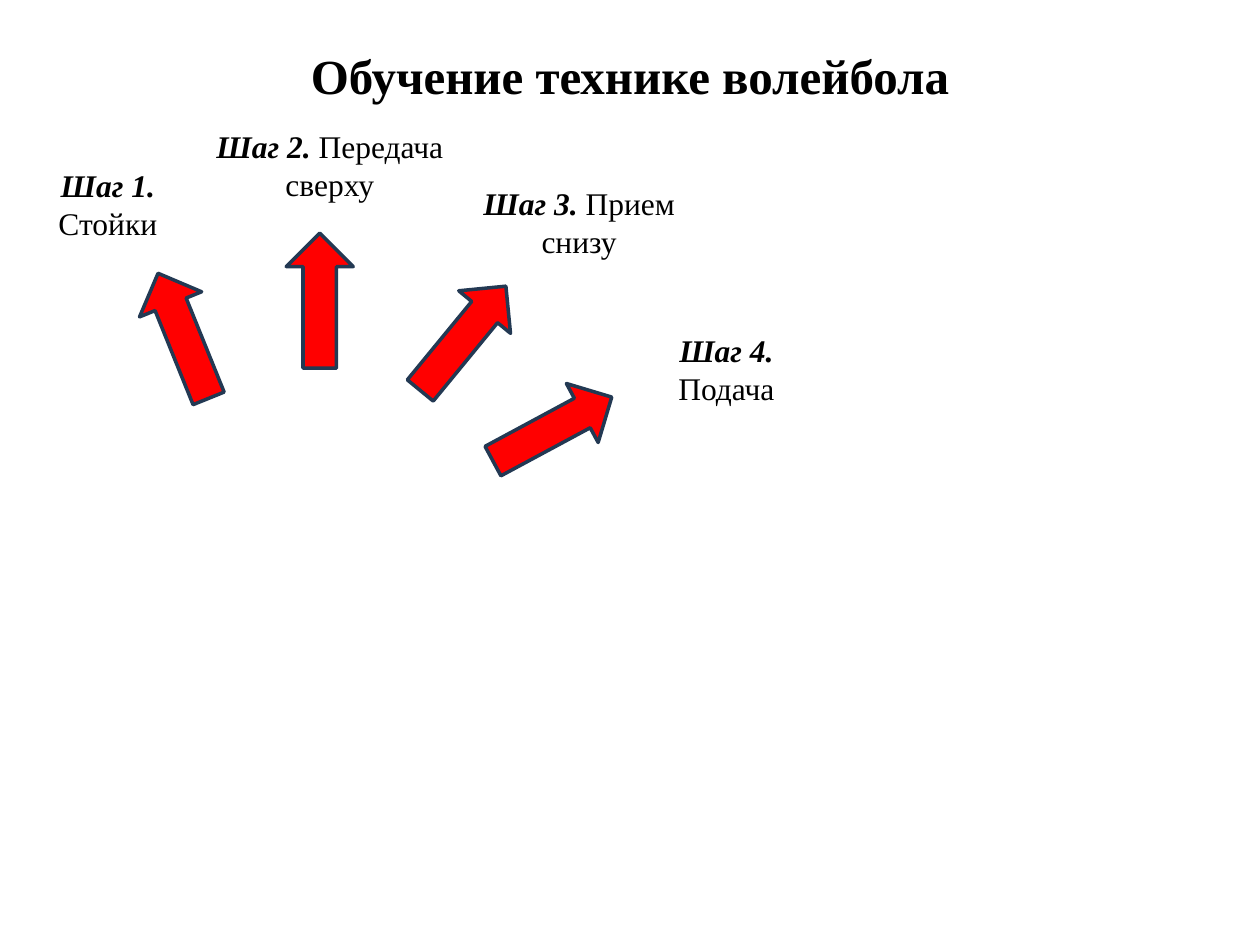
"""Build a slide with the steps of learning volleyball technique."""
from dataclasses import dataclass

from pptx import Presentation
from pptx.dml.color import RGBColor
from pptx.enum.shapes import MSO_SHAPE
from pptx.enum.text import MSO_ANCHOR, PP_ALIGN
from pptx.slide import Slide
from pptx.text.text import TextFrame
from pptx.util import Cm, Pt

DOWN_ARROW = MSO_SHAPE.DOWN_ARROW
CENTER = PP_ALIGN.CENTER
TOP = MSO_ANCHOR.TOP
FONT = "Times New Roman"
BLACK, RED, NAVY = "000000", "FF0000", "233953"
LABEL_HEIGHT = 1.8
ARROW_WIDTH, ARROW_HEIGHT = 1.35, 2.72


@dataclass(frozen=True)
class Step:
    number: int
    name: str
    left: float
    top: float
    width: float
    arrow_left: float
    arrow_top: float
    rotation: float


STEPS = [
    Step(1, "Стойки", 0.64, 3.23, 3.07, 3.02, 5.41, 158),
    Step(2, "Передача сверху", 4.06, 2.44, 5.18, 5.77, 4.7, 180),
    Step(3, "Прием снизу", 9.4, 3.58, 4.55, 8.66, 5.46, 219.4),
    Step(4, "Подача", 13.11, 6.55, 3.07, 10.46, 7.29, 241.7),
]


def color(value: str) -> RGBColor:
    """Turn a hex string into a colour."""
    return RGBColor.from_string(value)


def add_text_box(page: Slide, left: float, top: float, width: float, height: float) -> TextFrame:
    """Add a wrapping, centred text box and return its frame."""
    box = page.shapes.add_textbox(Cm(left), Cm(top), Cm(width), Cm(height))
    frame = box.text_frame
    frame.word_wrap = True
    frame.vertical_anchor = TOP
    frame.paragraphs[0].alignment = CENTER
    return frame


def add_span(frame: TextFrame, text: str, size: int, bold: bool = False, italic: bool = False) -> None:
    """Append one run to the first paragraph."""
    span = frame.paragraphs[0].add_run()
    span.text = text
    span.font.name = FONT
    span.font.size = Pt(size)
    span.font.bold = bold
    span.font.italic = italic
    span.font.color.rgb = color(BLACK)


def add_title(page: Slide, text: str) -> None:
    """Add the slide heading."""
    frame = add_text_box(page, 4.9, 0.74, 15.6, 1.8)
    frame.margin_top = Cm(0.18)
    add_span(frame, text, 28, bold=True)


def add_arrow(page: Slide, step: Step) -> None:
    """Add the arrow that points to a step."""
    arrow = page.shapes.add_shape(
        DOWN_ARROW, Cm(step.arrow_left), Cm(step.arrow_top), Cm(ARROW_WIDTH), Cm(ARROW_HEIGHT)
    )
    arrow.rotation = step.rotation
    arrow.shadow.inherit = False
    arrow.fill.solid()
    arrow.fill.fore_color.rgb = color(RED)
    arrow.line.color.rgb = color(NAVY)
    arrow.line.width = Pt(2)


def add_label(page: Slide, step: Step) -> None:
    """Add the numbered name of a step."""
    frame = add_text_box(page, step.left, step.top, step.width, LABEL_HEIGHT)
    add_span(frame, f"Шаг {step.number}. ", 18, bold=True, italic=True)
    add_span(frame, step.name, 18)


def main() -> None:
    """Build and save the deck."""
    deck = Presentation()
    deck.slide_width, deck.slide_height = Cm(25.4), Cm(19.05)
    page = deck.slides.add_slide(deck.slide_layouts[6])
    add_title(page, "Обучение технике волейбола")
    for step in STEPS:
        add_arrow(page, step)
        add_label(page, step)
    deck.save("out.pptx")


if __name__ == "__main__":
    main()
